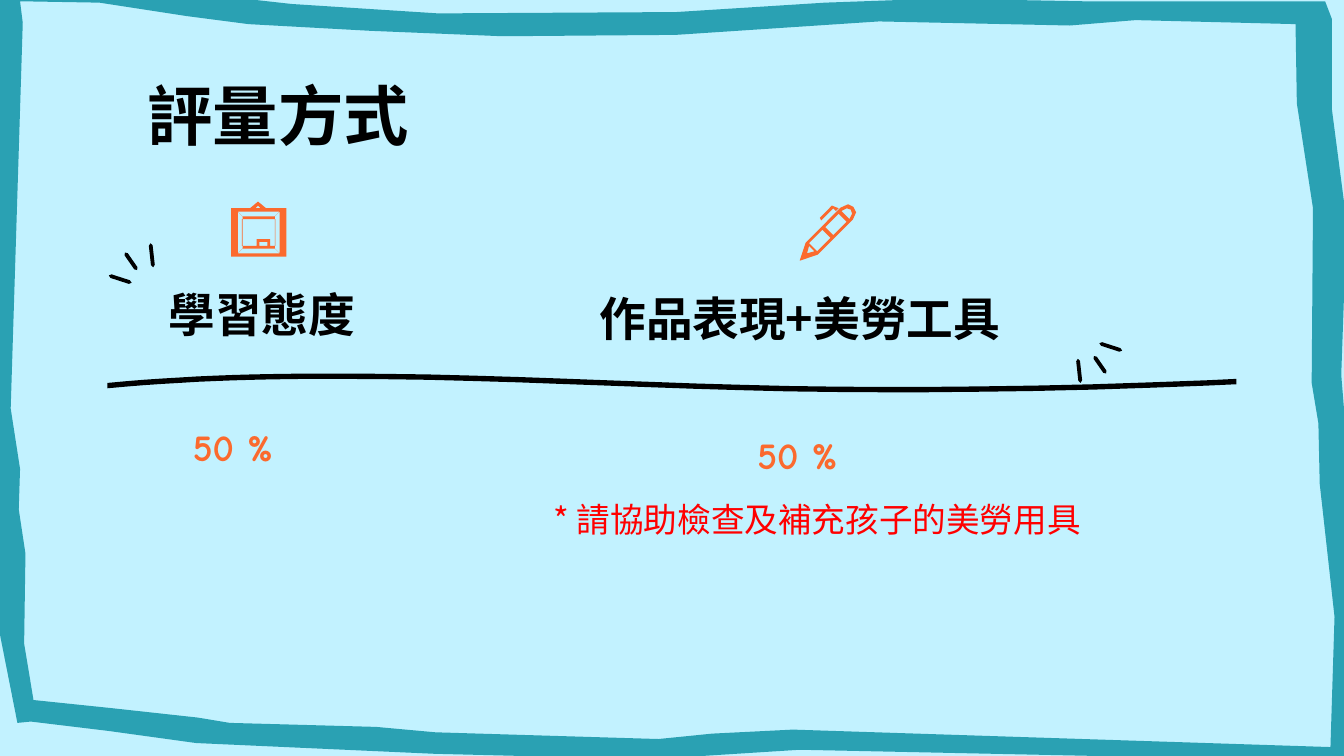
from dataclasses import dataclass
from math import hypot

from lxml import etree
from pptx import Presentation
from pptx.dml.color import RGBColor
from pptx.enum.text import MSO_ANCHOR, MSO_AUTO_SIZE, PP_ALIGN
from pptx.oxml.ns import qn
from pptx.util import Cm, Pt

LEFT, CENTER = PP_ALIGN.LEFT, PP_ALIGN.CENTER
TOP, MIDDLE = MSO_ANCHOR.TOP, MSO_ANCHOR.MIDDLE
NO_AUTOFIT = MSO_AUTO_SIZE.NONE
COLORS = {
    "background": "C2F2FF", "border": "2AA1B3", "ink": "000000",
    "accent": "FB6A2E", "warning": "FF0000",
}
CJK_FONT, HAND_FONT = "Noto Sans CJK TC", "Comic Neue"
Point = tuple[float, float]
Contour = list[Point]

# Outlines are given in hundredths of an inch and drawn on a grid ten times finer
FINENESS = 10
GRID_UNIT = Cm(2.54) / 100 / FINENESS


@dataclass
class Label:
    text: str
    left: float
    top: float
    width: float
    height: float
    size: float
    color: str = "ink"
    font: str = CJK_FONT
    bold: bool = True
    align: PP_ALIGN = CENTER
    anchor: MSO_ANCHOR = TOP
    space_after: float = 0


@dataclass
class Outline:
    contours: list[Contour]
    color: str


def box(left: float, top: float, right: float, bottom: float) -> Contour:
    return [(left, top), (right, top), (right, bottom), (left, bottom)]


def reflect(contour: Contour) -> Contour:
    """Turn a contour half round the midpoint between the two spark groups."""
    return [(916 - x, 466 - y) for x, y in contour]


def stroke(start: Point, end: Point, half: float = 1.4) -> Contour:
    """A short brush mark with pointed ends."""
    dx, dy = end[0] - start[0], end[1] - start[1]
    length = hypot(dx, dy)

    def at(along: float, across: float) -> Point:
        return (start[0] + dx * along - dy / length * across,
                start[1] + dy * along + dx / length * across)

    return [start, at(0.1, half), at(0.9, half), end, at(0.9, -half), at(0.1, -half)]


def bezier_chain(controls: Contour, steps: int = 12) -> Contour:
    points = [controls[0]]
    for first in range(0, len(controls) - 1, 3):
        segment = controls[first:first + 4]
        for step in range(1, steps + 1):
            t = step / steps
            weights = ((1 - t) ** 3, 3 * t * (1 - t) ** 2, 3 * t * t * (1 - t), t ** 3)
            points.append((sum(w * p[0] for w, p in zip(weights, segment)),
                           sum(w * p[1] for w, p in zip(weights, segment))))
    return points


def band(center: Contour, half: float) -> Contour:
    upper = [(x, y - half) for x, y in center]
    lower = [(x, y + half) for x, y in reversed(center)]
    return upper + lower


def along_pen(contour: Contour) -> Contour:
    """Map (distance from tip, offset from axis) to the slanted pen."""
    return [(596 + u + v, 193 - u + v) for u, v in contour]


def mitred_sides(center: Point, outer: float, inner: float) -> list[Contour]:
    """Four trapezoids between two squares, each a quarter turn from the last."""
    side = [(-outer, -outer), (outer, -outer), (inner, -inner), (-inner, -inner)]
    sides = []
    for _ in range(4):
        sides.append([(center[0] + x, center[1] + y) for x, y in side])
        side = [(-y, x) for x, y in side]
    return sides


def draw_outline(slide, outline: Outline) -> None:
    scaled = [[(x * FINENESS, y * FINENESS) for x, y in contour]
              for contour in outline.contours]
    builder = slide.shapes.build_freeform(*scaled[0][0], scale=GRID_UNIT)
    for index, contour in enumerate(scaled):
        if index:
            builder.move_to(*contour[0])
        builder.add_line_segments(contour[1:], close=True)
    shape = builder.convert_to_shape()
    shape.shadow.inherit = False
    shape.fill.solid()
    shape.fill.fore_color.rgb = RGBColor.from_string(COLORS[outline.color])
    shape.line.fill.background()


def write_label(shape, label: Label) -> None:
    shape.left, shape.top = Cm(label.left), Cm(label.top)
    shape.width, shape.height = Cm(label.width), Cm(label.height)
    frame = shape.text_frame
    frame.word_wrap, frame.auto_size = True, NO_AUTOFIT
    frame.vertical_anchor = label.anchor
    frame.margin_left = frame.margin_right = Cm(0.25)
    frame.margin_top = frame.margin_bottom = Cm(0.25)
    paragraph = frame.paragraphs[0]
    paragraph.alignment = label.align
    paragraph.space_after = Pt(label.space_after)
    run = paragraph.add_run()
    run.text = label.text
    run.font.size, run.font.bold = Pt(label.size), label.bold
    run.font.color.rgb = RGBColor.from_string(COLORS[label.color])
    run.font.name = label.font
    east_asian = etree.SubElement(run.font._element, qn("a:ea"))
    east_asian.set("typeface", label.font)


# Hand-drawn border: outer edge, then inner edge
BORDER = [
    [(13, 538), (-1, 467), (-4, 405), (-17, 311), (-5, -12), (22, -19), (145, -5),
     (217, 3), (326, 10), (503, 9), (614, 2), (698, -1), (806, 1), (986, 1), (991, 14),
     (991, 81), (1002, 165), (998, 279), (1013, 465), (1012, 569), (931, 565),
     (595, 558), (485, 565), (323, 561), (146, 553), (81, 544), (23, 537)],
    [(25, 521), (83, 527), (147, 534), (171, 538), (280, 541), (324, 545), (490, 550),
     (530, 546), (590, 543), (990, 556), (993, 459), (982, 360), (981, 315), (976, 285),
     (977, 155), (965, 77), (964, 18), (845, 15), (796, 19), (654, 16), (503, 26),
     (374, 27), (276, 23), (185, 18), (139, 12), (74, 2), (15, 1), (17, 17), (8, 304),
     (15, 349), (14, 379), (19, 412), (18, 479)],
]

# Spark strokes beside the right heading; the left group is their reflection
SPARKS = [stroke((818, 255.5), (835, 261)), stroke((802, 267), (804, 285)),
          stroke((814, 265), (823, 278))]
DIVIDER = bezier_chain([
    (80, 287), (133, 282), (187, 280), (244, 280), (400, 280), (500, 290), (664, 290),
    (749, 290), (835, 288), (920, 284)])

# Icons: a slanted pen with its clip, and a hanging picture frame
PEN = [
    along_pen([(-1, 0), (8, -4.5), (34, -4.5), (38, -3), (39, 0), (38, 3), (34, 4.5),
               (8, 4.5)]),
    along_pen([(4.5, 0), (8, -2), (8, 2)]),
    along_pen(box(9, -3, 19, 3)),
    along_pen(box(21, -3, 31, 3)),
    along_pen([(33, -3), (36, -2), (37, 0), (36, 2), (33, 3)]),
    [(610, 162), (619, 153), (624, 155), (622, 157), (620, 155), (611, 164)],
]
PICTURE_FRAME = [
    box(172, 155, 213, 191),
    *mitred_sides((192.5, 173), 15.5, 12),
    box(180, 163, 205, 183),
    box(191, 178, 201, 183),
    box(193, 180, 199, 183),
    [(186, 155), (192, 150), (198, 155)],
    [(190, 155), (192, 153), (194, 155)],
]

OUTLINES = [
    Outline(BORDER, "border"),
    *[Outline([mark], "ink") for spark in SPARKS for mark in (spark, reflect(spark))],
    Outline([band(DIVIDER, 2)], "ink"),
    Outline(PEN, "accent"),
    Outline(PICTURE_FRAME, "accent"),
]
TITLE = Label("評量方式", 2.54, 1.17, 21.44, 1.6, 35, align=LEFT)
LABELS = [
    Label("學習態度", 2.51, 5.16, 4.88, 1.85, 25, space_after=8),
    Label("作品表現+美勞工具", 9.83, 5.23, 10.57, 1.88, 25, space_after=8),
    *[Label("50 %", left, top, 3.12, 1.19, 20, "accent", HAND_FONT, anchor=MIDDLE)
      for left, top in ((2.84, 7.85), (13.51, 8))],
    Label("* 請協助檢查及補充孩子的美勞用具", 10.21, 9.19, 12.8, 2.34, 18, "warning",
          bold=False, align=LEFT),
]


def main() -> None:
    presentation = Presentation()
    presentation.slide_width, presentation.slide_height = Cm(25.4), Cm(14.29)
    slide = presentation.slides.add_slide(presentation.slide_layouts[5])
    slide.background.fill.solid()
    slide.background.fill.fore_color.rgb = RGBColor.from_string(COLORS["background"])

    # Border, divider and icons
    for outline in OUTLINES:
        draw_outline(slide, outline)

    # Title, headings, shares and reminder
    write_label(slide.shapes.title, TITLE)
    for label in LABELS:
        write_label(slide.shapes.add_textbox(0, 0, 0, 0), label)
    presentation.save("out.pptx")


if __name__ == "__main__":
    main()
